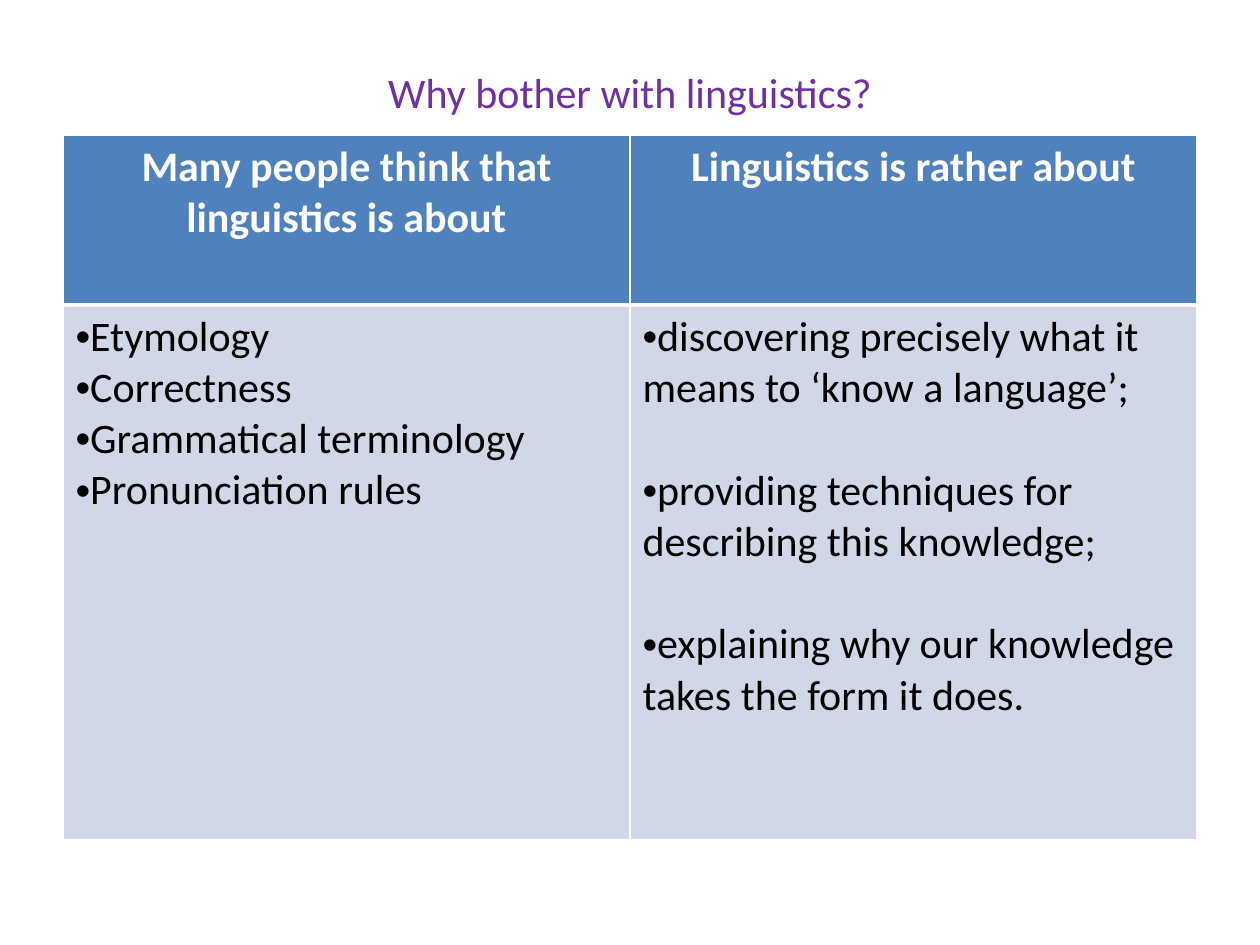
from lxml import etree
from pptx import Presentation
from pptx.dml.color import RGBColor
from pptx.enum.text import MSO_ANCHOR, PP_ALIGN
from pptx.oxml.ns import qn
from pptx.util import Cm, Pt

MID, MIDDLE, LEFT = PP_ALIGN.CENTER, MSO_ANCHOR.MIDDLE, PP_ALIGN.LEFT

TITLE = "Why bother with linguistics?"
COLS = [
    {
        "head": "Many people think that linguistics is about",
        "items": ["Etymology", "Correctness", "Grammatical terminology",
                  "Pronunciation rules"],
        "gap": 0,
    },
    {
        "head": "Linguistics is rather about",
        "items": ["discovering precisely what it means to ‘know a language’;",
                  "providing techniques for describing this knowledge;",
                  "explaining why our knowledge takes the form it does."],
        "gap": 29.3,
    },
]
THEME = {"font": "Calibri", "size": 24, "title": "7030A0", "head": "4F81BD",
         "body": "D0D8E8", "light": "FFFFFF", "dark": "000000",
         "thin": 1, "thick": 3}
SIDE, WIDTH = 1.27, 22.86
ROWS = [3.43, 10.77]


def style(para, color, bold=False, align=LEFT):
    para.alignment = align
    for run in para.runs:
        font = run.font
        font.name, font.size, font.bold = THEME["font"], Pt(THEME["size"]), bold
        font.color.rgb = RGBColor.from_string(THEME[color])


def bullet(para):
    props = para._p.get_or_add_pPr()
    etree.SubElement(props, qn("a:buFont"), typeface="Arial")
    etree.SubElement(props, qn("a:buChar"), char="•")


def border(cell, top, base):
    props = cell._tc.get_or_add_tcPr()
    for side, width in zip("LRTB", ("thin", "thin", top, base)):
        line = etree.SubElement(props, qn("a:ln" + side),
                                w=str(Pt(THEME[width])))
        fill = etree.SubElement(line, qn("a:solidFill"))
        etree.SubElement(fill, qn("a:srgbClr"), val=THEME["light"])


def paint(cell, color):
    cell.fill.solid()
    cell.fill.fore_color.rgb = RGBColor.from_string(THEME[color])


def main():
    deck = Presentation()
    deck.slide_width, deck.slide_height = Cm(25.4), Cm(19.05)
    slide = deck.slides.add_slide(deck.slide_layouts[5])

    title = slide.shapes.title
    title.left, title.top = Cm(SIDE), Cm(0.76)
    title.width, title.height = Cm(WIDTH), Cm(2.16)
    title.text_frame.text = TITLE
    title.text_frame.vertical_anchor = MIDDLE
    style(title.text_frame.paragraphs[0], "title", align=MID)

    table = slide.shapes.add_table(len(ROWS), len(COLS), Cm(SIDE), Cm(2.72),
                                   Cm(WIDTH), Cm(sum(ROWS))).table
    for row, high in zip(table.rows, ROWS):
        row.height = Cm(high)

    for i, col in enumerate(COLS):
        table.columns[i].width = Cm(WIDTH / len(COLS))
        head, body = table.cell(0, i), table.cell(1, i)
        border(head, "thin", "thick")
        border(body, "thick", "thin")
        paint(head, "head")
        paint(body, "body")

        head.text_frame.text = col["head"]
        style(head.text_frame.paragraphs[0], "light", True, MID)
        body.text_frame.text = "\n".join(col["items"])
        for para in body.text_frame.paragraphs:
            style(para, "dark")
            para.space_after = Pt(col["gap"])
            bullet(para)

    deck.save("out.pptx")


if __name__ == "__main__":
    main()
